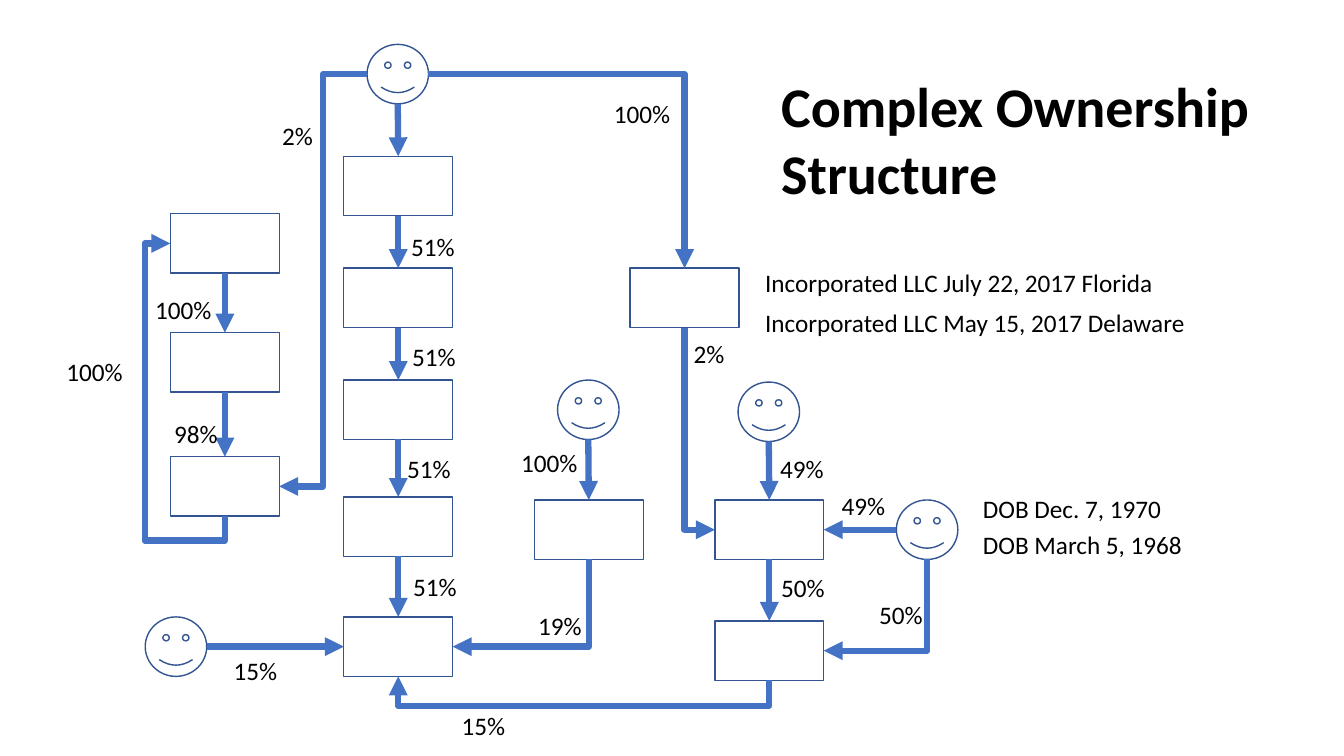
from dataclasses import dataclass
from itertools import pairwise

from lxml.etree import SubElement
from pptx import Presentation
from pptx.dml.color import RGBColor
from pptx.enum.shapes import MSO_CONNECTOR as Link, MSO_SHAPE as Preset
from pptx.enum.text import MSO_AUTO_SIZE as AutoSize
from pptx.oxml.ns import qn
from pptx.util import Emu, Pt

PX = 9144
TOP, LEFT, BOTTOM, RIGHT = range(4)
BOX_SIZE = (108, 59)
FACE_SIZE = (61, 59)
LABEL_HEIGHT = 40


@dataclass(frozen=True)
class Theme:
    outline: RGBColor = RGBColor.from_string("325491")
    arrow: RGBColor = RGBColor.from_string("4472C4")
    ink: RGBColor = RGBColor.from_string("000000")
    font: str = "Calibri"
    title_size: int = 40
    body_size: int = 18
    outline_width: float = 1
    arrow_width: float = 4.5


THEME = Theme()


def px(value):
    return Emu(round(value * PX))


def add_node(page, preset, left, top, size):
    node = page.shapes.add_shape(preset, *map(px, (left, top, *size)))
    node.shadow.inherit = False
    node.fill.background()
    node.line.color.rgb = THEME.outline
    node.line.width = Pt(THEME.outline_width)
    return node


def add_box(page, left, top):
    return add_node(page, Preset.RECTANGLE, left, top, BOX_SIZE)


def add_face(page, left, top):
    return add_node(page, Preset.SMILEY_FACE, left, top, FACE_SIZE)


def add_text(page, text, left, top, width, height=LABEL_HEIGHT, *,
             size=THEME.body_size, bold=False, wrap=False):
    box = page.shapes.add_textbox(*map(px, (left, top, width, height)))
    frame = box.text_frame
    frame.word_wrap = wrap
    frame.auto_size = AutoSize.SHAPE_TO_FIT_TEXT
    span = frame.paragraphs[0].add_run()
    span.text = text
    span.font.name = THEME.font
    span.font.size = Pt(size)
    span.font.bold = bold
    span.font.color.rgb = THEME.ink


def side_middle(node, side):
    across = {LEFT: 0, RIGHT: 2}.get(side, 1)
    down = {TOP: 0, BOTTOM: 2}.get(side, 1)
    return node.left + node.width * across // 2, node.top + node.height * down // 2


def style_arrow(arrow):
    arrow.line.color.rgb = THEME.arrow
    arrow.line.width = Pt(THEME.arrow_width)
    SubElement(arrow.line._get_or_add_ln(), qn("a:tailEnd"), type="triangle")
    SubElement(arrow._element.spPr, qn("a:effectLst"))


def add_straight(page, start, start_side, end, end_side):
    arrow = page.shapes.add_connector(
        Link.STRAIGHT, *side_middle(start, start_side), *side_middle(end, end_side))
    if start.auto_shape_type == Preset.RECTANGLE:
        arrow.begin_connect(start, start_side)
    if end.auto_shape_type == Preset.RECTANGLE:
        arrow.end_connect(end, end_side)
    style_arrow(arrow)


def add_elbow(page, start, start_side, end, end_side, bends=1, adjust=()):
    x1, y1 = side_middle(start, start_side)
    x2, y2 = side_middle(end, end_side)
    width, height = abs(x2 - x1), abs(y2 - y1)
    if start_side in (TOP, BOTTOM):
        width, height = height, width
        turn = 90 if x2 <= x1 else 270
        flips = {"flipH": (turn == 90) != (y2 > y1)}
    else:
        turn = 0
        flips = {"flipH": x2 < x1, "flipV": y2 < y1}
    left, top = (x1 + x2 - width) // 2, (y1 + y2 - height) // 2
    arrow = page.shapes.add_connector(Link.ELBOW, left, top, left + width, top + height)
    properties = arrow._element.spPr
    frame = properties.find(qn("a:xfrm"))
    if turn:
        frame.set("rot", str(turn * 60000))
    for name, flipped in flips.items():
        if flipped:
            frame.set(name, "1")
    geometry = properties.find(qn("a:prstGeom"))
    geometry.set("prst", f"bentConnector{bends + 1}")
    guides = geometry.find(qn("a:avLst"))
    for number, share in enumerate(adjust, 1):
        SubElement(guides, qn("a:gd"), name=f"adj{number}",
                   fmla=f"val {round(share * 100000)}")
    style_arrow(arrow)


def add_chain(page, left, tops):
    boxes = [add_box(page, left, top) for top in tops]
    for upper, lower in pairwise(boxes):
        add_straight(page, upper, BOTTOM, lower, TOP)
    return boxes


def add_structure(page):
    main_chain = add_chain(page, 341, (155, 266, 377, 493, 612))
    left_chain = add_chain(page, 169, (212, 330, 453))
    right_chain = add_chain(page, 709, (496, 616))
    middle_box = add_box(page, 530, 496)
    florida_box = add_box(page, 625, 266)

    top_owner = add_face(page, 364, 44)
    main_owner = add_face(page, 144, 612)
    middle_owner = add_face(page, 553, 377)
    right_owner = add_face(page, 732, 379)
    joint_owner = add_face(page, 889, 496)

    add_straight(page, top_owner, BOTTOM, main_chain[0], TOP)
    add_straight(page, main_owner, RIGHT, main_chain[-1], LEFT)
    add_straight(page, middle_owner, BOTTOM, middle_box, TOP)
    add_straight(page, right_owner, BOTTOM, right_chain[0], TOP)
    add_straight(page, joint_owner, LEFT, right_chain[0], RIGHT)

    add_elbow(page, top_owner, RIGHT, florida_box, TOP)
    add_elbow(page, florida_box, BOTTOM, right_chain[0], LEFT)
    add_elbow(page, middle_box, BOTTOM, main_chain[-1], RIGHT)
    add_elbow(page, joint_owner, BOTTOM, right_chain[-1], RIGHT)
    add_elbow(page, top_owner, LEFT, left_chain[-1], RIGHT, bends=2, adjust=(0.5,))
    add_elbow(page, right_chain[-1], BOTTOM, main_chain[-1], BOTTOM,
              bends=2, adjust=(-6.25,))
    add_elbow(page, left_chain[-1], BOTTOM, left_chain[0], LEFT,
              bends=3, adjust=(-0.09, 1.47))


def add_labels(page):
    widths = {2: 51, 3: 64, 4: 77}
    shares = (
        ("51%", 398, 225), ("51%", 399, 334), ("51%", 394, 445), ("51%", 400, 562),
        ("15%", 448, 700), ("15%", 222, 645), ("19%", 524, 601),
        ("100%", 56, 349), ("100%", 599, 93), ("100%", 144, 287), ("100%", 507, 439),
        ("2%", 270, 114), ("2%", 678, 331), ("98%", 163, 410),
        ("49%", 764, 445), ("49%", 825, 482), ("50%", 765, 563), ("50%", 862, 590),
    )
    for share, left, top in shares:
        add_text(page, share, left, top, widths[len(share)])
    add_text(page, "Incorporated LLC July 22, 2017 Florida", 749, 260, 409)
    add_text(page, "Incorporated LLC May 15, 2017 Delaware", 749, 300, 441)
    add_text(page, "DOB Dec. 7, 1970", 965, 484, 205)
    add_text(page, "DOB March 5, 1968", 965, 520, 226)
    add_text(page, "Complex Ownership Structure", 765, 66, 504, 145,
             size=THEME.title_size, bold=True, wrap=True)


def main():
    deck = Presentation()
    deck.slide_width, deck.slide_height = px(1333), px(750)
    page = deck.slides.add_slide(deck.slide_layouts[6])
    add_structure(page)
    add_labels(page)
    deck.save("out.pptx")


if __name__ == "__main__":
    main()
